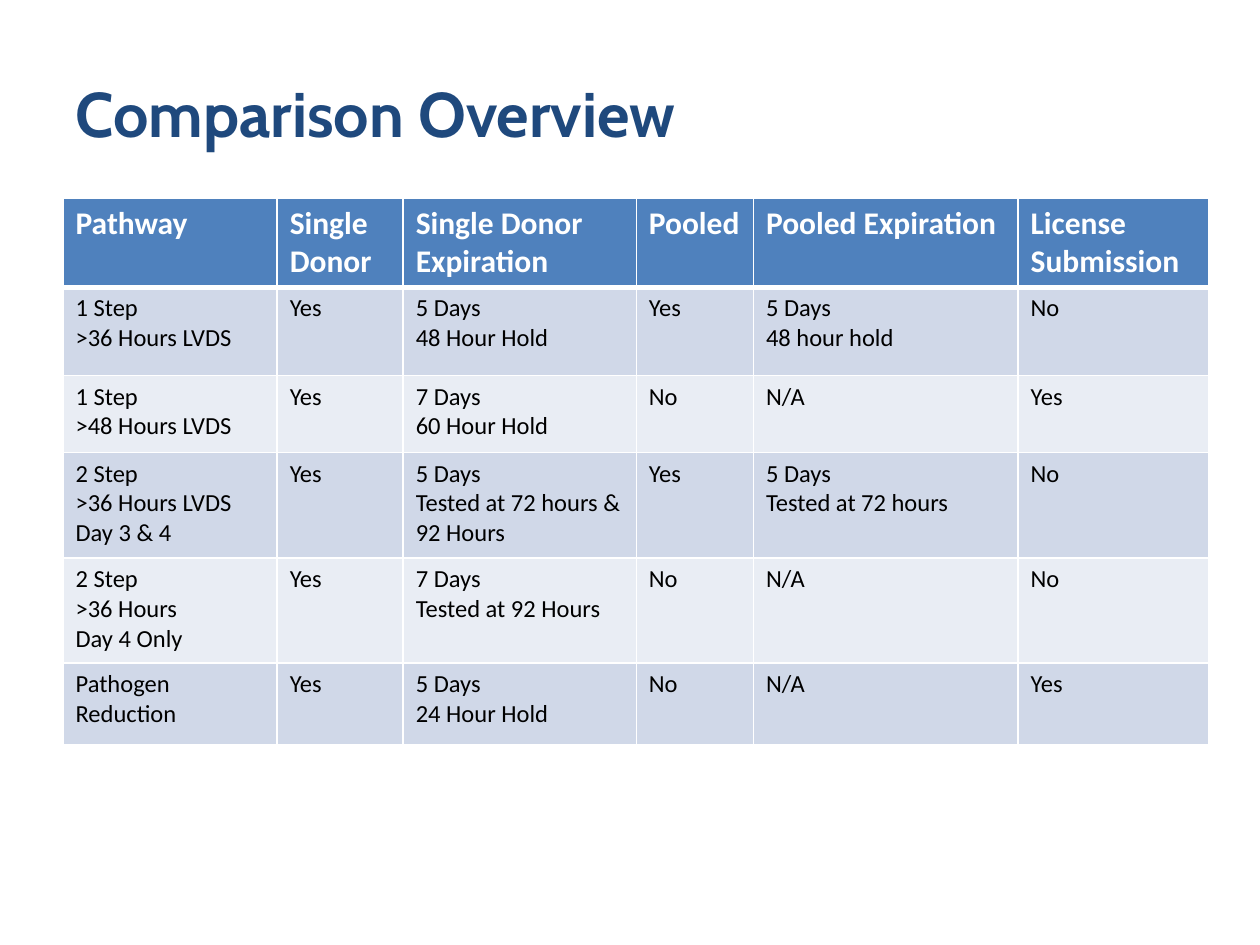
from dataclasses import dataclass

from lxml import etree
from pptx import Presentation
from pptx.dml.color import RGBColor
from pptx.enum.text import MSO_ANCHOR, PP_ALIGN
from pptx.oxml.ns import qn
from pptx.util import Inches, Pt

MIDDLE = MSO_ANCHOR.MIDDLE
TOP = MSO_ANCHOR.TOP
LEFT = PP_ALIGN.LEFT
TITLE_ONLY = 5


@dataclass(frozen=True)
class Theme:
    """Fonts, type sizes, line widths and colours of the slide."""
    title_font: str = "Cabin"
    body_font: str = "Calibri"
    title_size: int = 36
    header_size: int = 18
    body_size: int = 14
    title: str = "1F497D"
    header_text: str = "FFFFFF"
    body_text: str = "000000"
    header_fill: str = "4F81BD"
    bands: tuple = ("D0D8E8", "E9EDF4")
    border: str = "FFFFFF"
    border_width: int = 1
    rule_width: int = 3


THEME = Theme()
TITLE_BOX = (0.5, 0.27, 9, 1.25)
TABLE_BOX = (0.5, 1.57, 9.09, 4.29)
COLUMN_WIDTHS = (1.7, 1, 1.85, 0.93, 2.1, 1.51)
ROW_HEIGHTS = (0.66, 0.7, 0.61, 0.84, 0.83, 0.65)
HEADER = ("Pathway", "Single Donor", "Single Donor Expiration", "Pooled",
          "Pooled Expiration", "License Submission")
PATHWAYS = (
    ("1 Step\n>36 Hours LVDS", "Yes", "5 Days\n48 Hour Hold",
     "Yes", "5 Days\n48 hour hold", "No"),
    ("1 Step\n>48 Hours LVDS", "Yes", "7 Days\n60 Hour Hold",
     "No", "N/A", "Yes"),
    ("2 Step\n>36 Hours LVDS\nDay 3 & 4", "Yes",
     "5 Days\nTested at 72 hours & 92 Hours",
     "Yes", "5 Days\nTested at 72 hours", "No"),
    ("2 Step\n>36 Hours\nDay 4 Only", "Yes", "7 Days\nTested at 92 Hours",
     "No", "N/A", "No"),
    ("Pathogen\nReduction", "Yes", "5 Days\n24 Hour Hold",
     "No", "N/A", "Yes"),
)


def write_text(frame, text, *, font, size, color, bold=False):
    """Fill a text frame with one left-aligned paragraph per line of text."""
    frame.text = text
    for para in frame.paragraphs:
        para.alignment = LEFT
        for span in para.runs:
            span.font.name = font
            span.font.size = Pt(size)
            span.font.bold = bold
            span.font.color.rgb = RGBColor.from_string(color)


def set_borders(cell, **widths):
    """Draw cell borders, given as widths in points keyed by side tag."""
    properties = cell._tc.get_or_add_tcPr()
    for position, (side, width) in enumerate(widths.items()):
        line = etree.Element(qn(f"a:{side}"), w=str(Pt(width)))
        fill = etree.SubElement(line, qn("a:solidFill"))
        etree.SubElement(fill, qn("a:srgbClr"), val=THEME.border)
        properties.insert(position, line)


def add_title(page, box, text):
    """Place and format the title placeholder."""
    title = page.shapes.title
    title.left, title.top, title.width, title.height = map(Inches, box)
    title.text_frame.vertical_anchor = MIDDLE
    write_text(title.text_frame, text, font=THEME.title_font,
               size=THEME.title_size, color=THEME.title, bold=True)


def add_comparison(page, box, rows):
    """Place the table with a header row and banded body rows."""
    table = page.shapes.add_table(
        len(rows), len(COLUMN_WIDTHS), *map(Inches, box)).table
    for column, width in zip(table.columns, COLUMN_WIDTHS):
        column.width = Inches(width)
    for index, (row, height, texts) in enumerate(
            zip(table.rows, ROW_HEIGHTS, rows)):
        row.height = Inches(height)
        header = index == 0
        fill = THEME.header_fill if header else THEME.bands[(index - 1) % 2]
        thin, thick = THEME.border_width, THEME.rule_width
        for cell, text in zip(row.cells, texts):
            write_text(cell.text_frame, text, font=THEME.body_font,
                       size=THEME.header_size if header else THEME.body_size,
                       color=THEME.header_text if header else THEME.body_text,
                       bold=header)
            cell.vertical_anchor = TOP
            cell.fill.solid()
            cell.fill.fore_color.rgb = RGBColor.from_string(fill)
            set_borders(cell, lnL=thin, lnR=thin,
                        lnT=thick if index == 1 else thin,
                        lnB=thick if header else thin)


def main():
    """Build and save the deck."""
    deck = Presentation()
    deck.slide_width, deck.slide_height = Inches(10), Inches(7.5)
    page = deck.slides.add_slide(deck.slide_layouts[TITLE_ONLY])
    add_title(page, TITLE_BOX, "Comparison Overview")
    add_comparison(page, TABLE_BOX, (HEADER, *PATHWAYS))
    deck.save("out.pptx")


if __name__ == "__main__":
    main()
